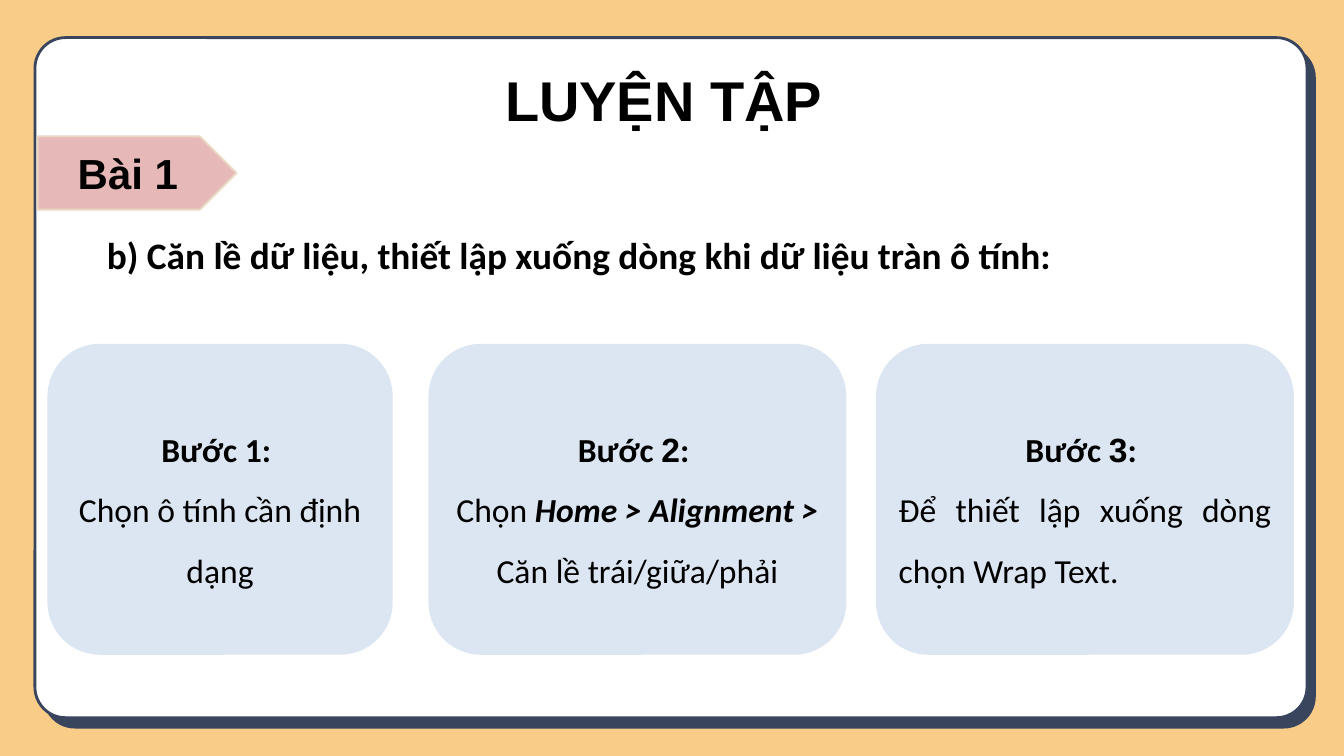
from pptx import Presentation
from pptx.dml.color import RGBColor
from pptx.enum import shapes, text
from pptx.oxml import ns
from pptx.util import Inches, Pt

NAVY, WHITE, BLACK = "38455D", "FFFFFF", "000000"
PALE_BLUE, PINK, SAND = "DCE6F2", "E6B9B8", "EAD8C4"
KIND = shapes.MSO_SHAPE
CENTER, JUSTIFY = text.PP_ALIGN.CENTER, text.PP_ALIGN.JUSTIFY


def paint(color_format, color):
    color_format.rgb = RGBColor.from_string(color)


def add_run(paragraph, words, size, font="Calibri", bold=False, italic=False):
    run = paragraph.add_run()
    run.text = words
    run.font.name, run.font.size = font, Pt(size)
    run.font.bold, run.font.italic = bold, italic
    paint(run.font.color, BLACK)


prs = Presentation()
prs.slide_width, prs.slide_height = Inches(20), Inches(11.25)
slide = prs.slides.add_slide(prs.slide_layouts[1])
slide.background.fill.solid()
paint(slide.background.fill.fore_color, "F9CC88")

# Filled shapes: kind, left, top, width, height, fill, line, line width
card_top, card_height = 5.13, 4.6
outlines = [
    (KIND.ROUNDED_RECTANGLE, 0.66, 0.7, 18.9, 10.12, NAVY, NAVY, 3),
    (KIND.ROUNDED_RECTANGLE, 0.52, 0.56, 18.93, 10.12, WHITE, NAVY, 3),
    (KIND.PENTAGON, 0.56, 2.03, 2.96, 1.09, PINK, SAND, 2),
]
for left, width in [(0.72, 5.11), (6.39, 6.19), (13.05, 6.19)]:
    outlines.append((KIND.ROUNDED_RECTANGLE, left, card_top, width, card_height,
                     PALE_BLUE, PALE_BLUE, 2))

drawn = []
for kind, left, top, width, height, fill, line, weight in outlines:
    shape = slide.shapes.add_shape(kind, Inches(left), Inches(top),
                                   Inches(width), Inches(height))
    shape.shadow.inherit = False
    shape.fill.solid()
    paint(shape.fill.fore_color, fill)
    paint(shape.line.color, line)
    shape.line.width = Pt(weight)
    shape.text_frame.vertical_anchor = text.MSO_ANCHOR.MIDDLE
    drawn.append(shape)
panel_shadow, panel, exercise, *cards = drawn

# Panel goes behind the placeholders
tree = panel.element.getparent()
for position, layer in enumerate([panel_shadow, panel], start=2):
    layer.adjustments[0] = 0.045
    tree.insert(position, layer.element)

# Title and question
title, question = slide.placeholders
for holder, left, top, width, height in [(title, 4.65, 0.92, 10.67, 1.11),
                                         (question, 1.49, 3.41, 17, 0.77)]:
    holder.left, holder.top = Inches(left), Inches(top)
    holder.width, holder.height = Inches(width), Inches(height)
    holder.text_frame.vertical_anchor = text.MSO_ANCHOR.TOP
    holder.text_frame.auto_size = text.MSO_AUTO_SIZE.NONE

heading = title.text_frame.paragraphs[0]
heading.alignment = CENTER
add_run(heading, "LUYỆN TẬP ", 60, "Arial", bold=True)

task = question.text_frame.paragraphs[0]
task.space_before = Pt(0)
properties = task._p.get_or_add_pPr()
properties.set("marL", "0")
properties.set("indent", "0")
properties.append(properties.makeelement(ns.qn("a:buNone"), {}))
add_run(task, "b) Căn lề dữ liệu, thiết lập xuống dòng khi dữ liệu tràn ô tính:", 40, bold=True)

# Exercise tag
label = exercise.text_frame.paragraphs[0]
label.alignment = CENTER
add_run(label, "Bài 1", 45, "Arial", bold=True)

# Step cards: heading font of the number, alignment, runs as (words, emphasised)
steps = [
    ("Calibri", CENTER, [("Chọn ô tính cần định dạng", False)]),
    ("Arial", CENTER, [("Chọn ", False), ("Home > Alignment > ", True),
                       ("Căn lề trái/giữa/phải", False)]),
    ("Arial", JUSTIFY, [("Để thiết lập xuống dòng chọn Wrap Text.", False)]),
]
for number, (card, (number_font, alignment, runs)) in enumerate(zip(cards, steps), start=1):
    step_name = card.text_frame.paragraphs[0]
    step_name.alignment, step_name.line_spacing = CENTER, 1.5
    add_run(step_name, "Bước ", 36, bold=True)
    add_run(step_name, str(number), 36, number_font, bold=True)
    add_run(step_name, ": ", 36, bold=True)

    instruction = card.text_frame.add_paragraph()
    instruction.alignment, instruction.line_spacing = alignment, 1.5
    for words, emphasised in runs:
        add_run(instruction, words, 36, bold=emphasised, italic=emphasised)

prs.save("out.pptx")
